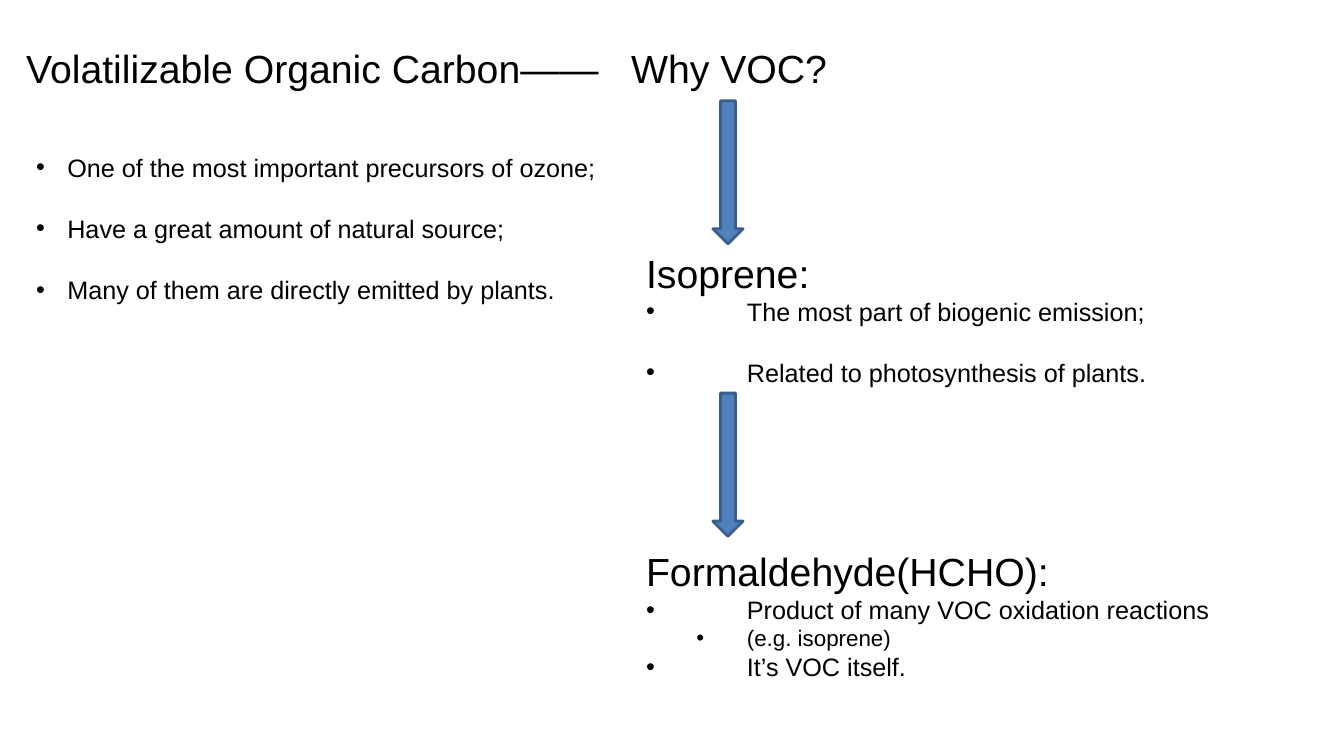
from pptx import Presentation
from pptx import util as u
from pptx.dml.color import RGBColor
from pptx.enum import shapes, text
from pptx.oxml.ns import qn
from lxml import etree

COLORS = {"ink": "000000", "arrow": "4F81BD", "edge": "3A5F8C"}
HEADING = {"size": 28}
POINT = {"size": 18, "margin": 1, "hang": 1}
SPACED = {**POINT, "before": 22}
DETAIL = {"size": 16, "margin": 1, "hang": 0.5, "level": 1}
LEFT_POINT = {"size": 18, "margin": 0.31, "hang": 0.31}


class SlideBuilder:
    def __init__(self, page, font="Arial"):
        self.page = page
        self.font = font

    def color(self, name):
        return RGBColor.from_string(COLORS[name])

    def text_box(self, left, top, width, height, lines, **frame_format):
        """Each line is a pair of wording and format values."""
        box = self.page.shapes.add_textbox(*map(u.Inches, (left, top, width, height)))
        frame = box.text_frame
        for name, value in {"word_wrap": True, **frame_format}.items():
            setattr(frame, name, value)
        for index, (wording, style) in enumerate(lines):
            para = frame.add_paragraph() if index else frame.paragraphs[0]
            self.fill_paragraph(para, wording, style)

    def fill_paragraph(self, para, wording, style):
        span = para.add_run()
        span.text = wording
        for name, value in {"name": self.font, "size": u.Pt(style["size"])}.items():
            setattr(span.font, name, value)
        span.font.color.rgb = self.color("ink")
        values = {"level": style.get("level", 0),
                  "space_before": u.Pt(style.get("before", 0)),
                  "line_spacing": style.get("spacing", 1.0)}
        for name, value in values.items():
            setattr(para, name, value)
        properties = para._p.get_or_add_pPr()
        if "hang" in style:
            properties.set("marL", str(u.Inches(style["margin"])))
            properties.set("indent", str(-u.Inches(style["hang"])))
            etree.SubElement(properties, qn("a:buFont"), typeface=self.font)
            etree.SubElement(properties, qn("a:buChar"), char="•")
        if "tab" in style:
            stops = etree.SubElement(properties, qn("a:tabLst"))
            etree.SubElement(stops, qn("a:tab"), pos=str(u.Inches(style["tab"])), algn="l")

    def down_arrow(self, left, top, length=1.42, thickness=0.3):
        arrow = self.page.shapes.add_shape(
            shapes.MSO_SHAPE.RIGHT_ARROW, *map(u.Inches, (left, top, length, thickness)))
        arrow.rotation = 90
        arrow.shadow.inherit = False
        arrow.fill.solid()
        arrow.fill.fore_color.rgb = self.color("arrow")
        arrow.line.color.rgb = self.color("edge")
        arrow.line.width = u.Pt(2)


def main():
    deck = Presentation()
    deck.slide_width, deck.slide_height = u.Inches(13.33), u.Inches(7.5)
    slide = SlideBuilder(deck.slides.add_slide(deck.slide_layouts[6]))

    # Title
    no_margins = dict.fromkeys(
        ("margin_left", "margin_top", "margin_right", "margin_bottom"), 0)
    slide.text_box(0.26, 0.34, 11.5, 0.73,
                   [("Volatilizable Organic Carbon——\tWhy VOC?",
                     {**HEADING, "spacing": 0.9, "tab": 6})],
                   vertical_anchor=text.MSO_ANCHOR.MIDDLE, **no_margins)

    # Reasons on the left
    slide.text_box(0.26, 1.46, 5.87, 2.22, [
        ("One of the most important precursors of ozone;", LEFT_POINT),
        ("Have a great amount of natural source;", {**LEFT_POINT, "before": 22}),
        ("Many of them are directly emitted by plants.", {**LEFT_POINT, "before": 22}),
    ])

    # Chain on the right: VOC, isoprene, formaldehyde
    for arrow_top in (1.56, 4.46):
        slide.down_arrow(6.51, arrow_top)
    slide.text_box(6.31, 2.42, 5.21, 1.48, [
        ("Isoprene:", HEADING),
        ("The most part of biogenic emission;", POINT),
        ("Related to photosynthesis of plants.", SPACED),
    ])
    slide.text_box(6.31, 5.38, 5.84, 1.48, [
        ("Formaldehyde(HCHO):", HEADING),
        ("Product of many VOC oxidation reactions", POINT),
        ("(e.g. isoprene)", DETAIL),
        ("It’s VOC itself.", POINT),
    ])

    deck.save("out.pptx")


if __name__ == "__main__":
    main()
